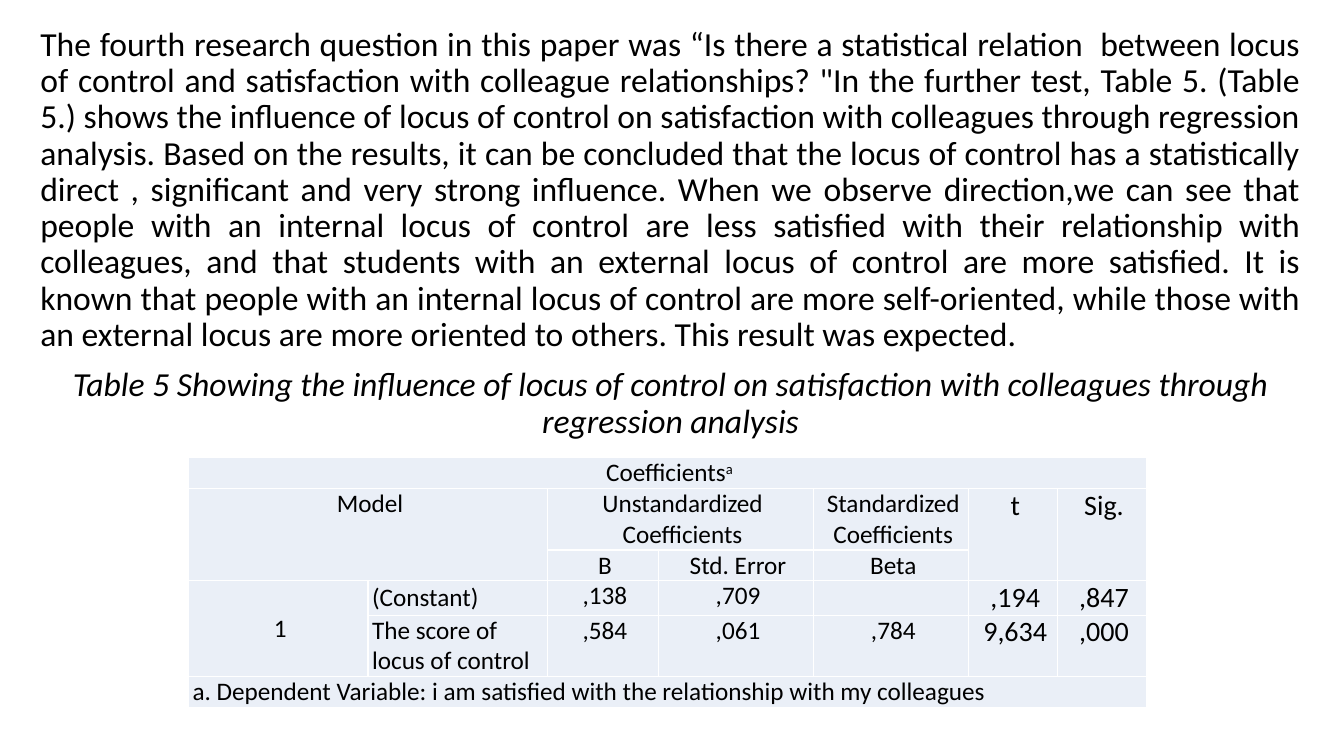
from dataclasses import dataclass

from lxml import etree
from pptx import Presentation
from pptx import util as u
from pptx.dml.color import RGBColor
from pptx.enum import text
from pptx.oxml import ns

BLACK = RGBColor(0x00, 0x00, 0x00)
WHITE = RGBColor(0xFF, 0xFF, 0xFF)
PALE_BLUE = RGBColor(0xEA, 0xEF, 0xF7)
FONT = "Calibri"
CENTER = text.PP_ALIGN.CENTER
LEFT = text.PP_ALIGN.LEFT
TOP = text.MSO_ANCHOR.TOP
MIDDLE = text.MSO_ANCHOR.MIDDLE

DISCUSSION_SENTENCES = (
    "The fourth research question in this paper was “Is there a statistical relation  between "
    "locus of control and satisfaction with colleague relationships?",
    "\"In the further test, Table 5. (Table 5.) shows the influence of locus of control on "
    "satisfaction with colleagues through regression analysis.",
    "Based on the results, it can be concluded that the locus of control has a statistically "
    "direct , significant and very strong influence.",
    "When we observe direction,we can see that people with an internal locus of control are less "
    "satisfied with their relationship with colleagues, and that students with an external locus "
    "of control are more satisfied.",
    "It is known that people with an internal locus of control are more self-oriented, while "
    "those with an external locus are more oriented to others.",
    "This result was expected.",
)
CAPTION = ("Table 5 Showing the influence of locus of control on satisfaction with colleagues "
           "through regression analysis")

COLUMN_WIDTHS = (1.78, 1.78, 1.1, 1.54, 1.54, 0.88, 0.88)
ROW_HEIGHTS = (0.3, 0.61, 0.3, 0.34, 0.61, 0.3)


@dataclass(frozen=True)
class Entry:
    row: int
    column: int
    words: str
    size: int = 18
    align: text.PP_ALIGN = CENTER
    anchor: text.MSO_ANCHOR = TOP
    rows: int = 1
    columns: int = 1
    superscript: str = ""


ENTRIES = (
    # Headings
    Entry(0, 0, "Coefficients", columns=7, superscript="a"),
    Entry(1, 0, "Model", rows=2, columns=2),
    Entry(1, 2, "Unstandardized Coefficients", columns=2),
    Entry(1, 4, "Standardized Coefficients"),
    Entry(1, 5, "t", 20, rows=2),
    Entry(1, 6, "Sig.", 20, rows=2),
    Entry(2, 2, "B"),
    Entry(2, 3, "Std. Error"),
    Entry(2, 4, "Beta"),
    # Model rows
    Entry(3, 0, "1", anchor=MIDDLE, rows=2),
    Entry(3, 1, "(Constant)", align=LEFT, anchor=MIDDLE),
    Entry(3, 2, ",138"),
    Entry(3, 3, ",709"),
    Entry(3, 5, ",194", 20),
    Entry(3, 6, ",847", 20),
    Entry(4, 1, "The score of locus of control", align=LEFT, anchor=MIDDLE),
    Entry(4, 2, ",584"),
    Entry(4, 3, ",061"),
    Entry(4, 4, ",784"),
    Entry(4, 5, "9,634", 20),
    Entry(4, 6, ",000", 20),
    # Footnote
    Entry(5, 0, "a. Dependent Variable: i am satisfied with the relationship with my colleagues",
          align=LEFT, columns=7),
)


def apply(target, formats: dict) -> None:
    for attribute, value in formats.items():
        setattr(target, attribute, value)


def add_words(paragraph, words: str, size: int, italic: bool = False):
    run = paragraph.add_run()
    run.text = words
    apply(run.font, {"name": FONT, "size": u.Pt(size), "bold": False, "italic": italic})
    run.font.color.rgb = BLACK
    return run


def set_indent(paragraph, inches: float) -> None:
    properties = paragraph._p.get_or_add_pPr()
    properties.set("marL", str(u.Inches(inches)))
    properties.set("indent", "0")


def style_cell(cell) -> None:
    apply(cell, {f"margin_{side}": 0 for side in ("left", "right", "top", "bottom")})
    properties = cell._tc.get_or_add_tcPr()
    for edge in ("lnL", "lnR", "lnT", "lnB"):
        line = etree.SubElement(properties, ns.qn(f"a:{edge}"), w=str(u.Pt(1)))
        fill = etree.SubElement(line, ns.qn("a:solidFill"))
        etree.SubElement(fill, ns.qn("a:srgbClr"), val=str(WHITE))
    cell.fill.solid()
    cell.fill.fore_color.rgb = PALE_BLUE


def fill_entry(table, entry: Entry) -> None:
    cell = table.cell(entry.row, entry.column)
    if entry.rows * entry.columns > 1:
        cell.merge(table.cell(entry.row + entry.rows - 1, entry.column + entry.columns - 1))
    cell.vertical_anchor = entry.anchor
    paragraph = cell.text_frame.paragraphs[0]
    paragraph.alignment = entry.align
    set_indent(paragraph, 0.04)
    add_words(paragraph, entry.words, entry.size)
    if entry.superscript:
        mark = add_words(paragraph, entry.superscript, entry.size)
        mark.font._element.set("baseline", "30000")


def add_discussion(slide) -> None:
    body = slide.placeholders[1]
    apply(body, {"left": u.Inches(0.3), "top": u.Inches(0.22),
                 "width": u.Inches(12.7), "height": u.Inches(4.76)})
    frame = body.text_frame
    apply(frame, {"word_wrap": True, "auto_size": text.MSO_AUTO_SIZE.NONE,
                  "vertical_anchor": TOP})
    parts = ((" ".join(DISCUSSION_SENTENCES), text.PP_ALIGN.JUSTIFY, False),
             (CAPTION, CENTER, True))
    for index, (words, align, italic) in enumerate(parts):
        paragraph = frame.add_paragraph() if index else frame.paragraphs[0]
        apply(paragraph, {"alignment": align, "line_spacing": 0.9, "space_before": u.Pt(10)})
        set_indent(paragraph, 0)
        etree.SubElement(paragraph._p.get_or_add_pPr(), ns.qn("a:buNone"))
        add_words(paragraph, words, 24, italic)


def add_coefficients(slide) -> None:
    table = slide.shapes.add_table(
        len(ROW_HEIGHTS), len(COLUMN_WIDTHS), u.Inches(1.87), u.Inches(4.54),
        u.Inches(sum(COLUMN_WIDTHS)), u.Inches(sum(ROW_HEIGHTS))).table
    apply(table, {"first_row": False, "horz_banding": False})
    for column, width in zip(table.columns, COLUMN_WIDTHS):
        column.width = u.Inches(width)
    for row, height in zip(table.rows, ROW_HEIGHTS):
        row.height = u.Inches(height)
    for cell in table.iter_cells():
        style_cell(cell)
    for entry in ENTRIES:
        fill_entry(table, entry)


def main() -> None:
    deck = Presentation()
    apply(deck, {"slide_width": u.Inches(13.33), "slide_height": u.Inches(7.5)})
    slide = deck.slides.add_slide(deck.slide_layouts[1])

    # The slide has no title
    title = slide.shapes.title.element
    title.getparent().remove(title)

    add_discussion(slide)
    add_coefficients(slide)
    deck.save("out.pptx")


if __name__ == "__main__":
    main()
